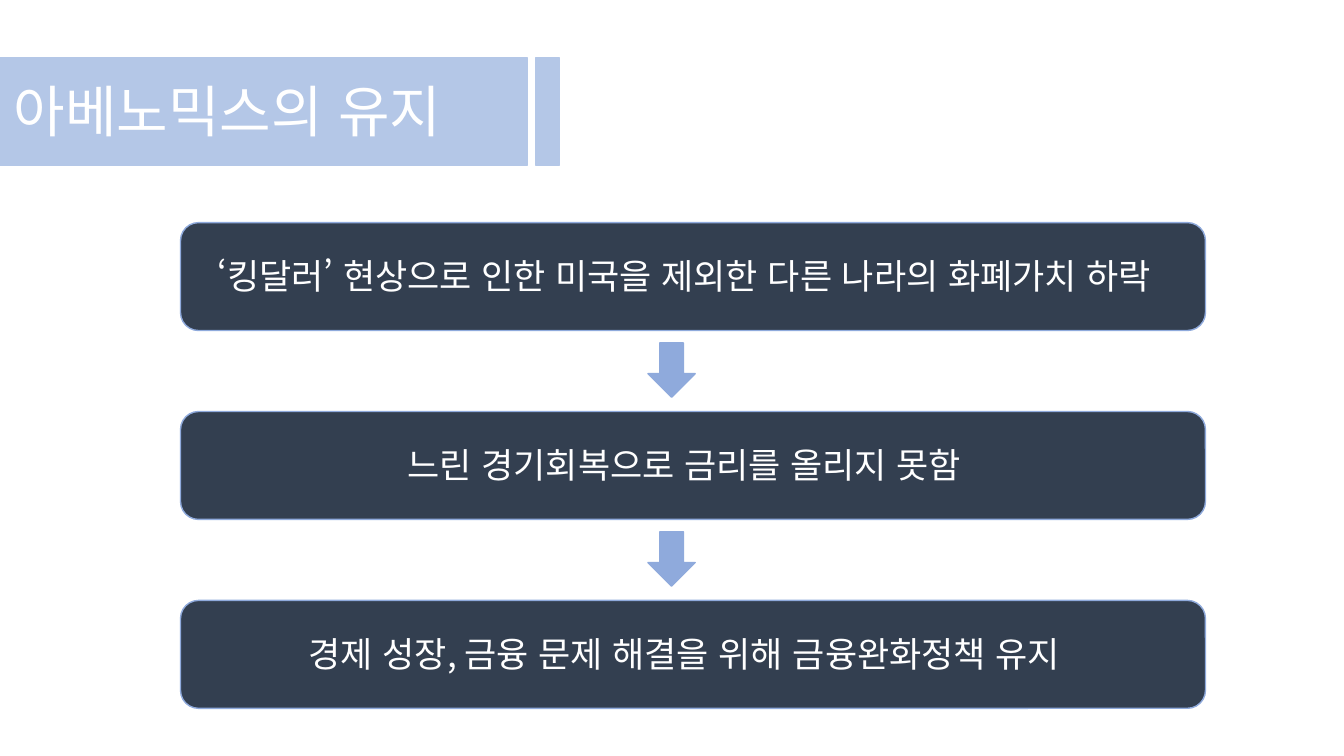
from pptx import Presentation
from pptx import util as u
from pptx.dml.color import RGBColor
from pptx.enum import lang, shapes, text
from pptx.oxml import parse_xml
from pptx.oxml.ns import nsdecls


def color(value):
    return RGBColor.from_string(value)


def apply(target, values):
    for name, value in values.items():
        setattr(target, name, value)


class Deck:
    font = "Noto Sans CJK KR"
    light, accent, dark, white = "B4C7E7", "8FAADC", "333F50", "FFFFFF"

    def __init__(self, width, height):
        self.file = Presentation()
        apply(self.file, {"slide_width": u.Cm(width), "slide_height": u.Cm(height)})
        self.slide = self.file.slides.add_slide(self.file.slide_layouts[6])

    def group(self):
        return self.slide.shapes.add_group_shape().shapes

    def block(self, parent, preset, place, fill, line):
        block = parent.add_shape(preset, *map(u.Cm, place))
        block.shadow.inherit = False
        block.fill.solid()
        block.fill.fore_color.rgb = color(fill)
        block.line.color.rgb = color(line)
        block.line.width = u.Pt(1)

    def label(self, parent, wording, place, size, align):
        frame = parent.add_textbox(*map(u.Cm, place)).text_frame
        apply(frame, {"word_wrap": True, "auto_size": text.MSO_AUTO_SIZE.SHAPE_TO_FIT_TEXT})
        paragraph = frame.paragraphs[0]
        paragraph.alignment = align
        run = paragraph.add_run()
        run.text = wording
        apply(run.font, {"size": u.Pt(size), "name": self.font,
                         "language_id": lang.MSO_LANGUAGE_ID.KOREAN})
        run.font.color.rgb = color(self.white)
        east_asian = parse_xml(f'<a:ea {nsdecls("a")} typeface="{self.font}"/>')
        run.font._element.find("{*}latin").addnext(east_asian)


REASONS = [
    "‘킹달러’ 현상으로 인한 미국을 제외한 다른 나라의 화폐가치 하락",
    "느린 경기회복으로 금리를 올리지 못함",
    "경제 성장, 금융 문제 해결을 위해 금융완화정책 유지",
]
FIRST_TOP, STEP = 5.61, 4.76


def main():
    deck = Deck(33.87, 19.05)
    preset = shapes.MSO_SHAPE

    banner = deck.group()
    for left, width in ((0, 13.28), (13.51, 0.58)):
        deck.block(banner, preset.RECTANGLE, (left, 1.45, width, 2.72), deck.light, deck.light)
    deck.label(deck.slide.shapes, "아베노믹스의 유지", (0.1, 1.8, 13.28, 1.96), 40,
               text.PP_ALIGN.LEFT)

    for index, reason in enumerate(REASONS):
        top = FIRST_TOP + index * STEP
        if index:
            deck.block(deck.slide.shapes, preset.DOWN_ARROW,
                       (16.33, top - 1.73, 1.19, 1.37), deck.accent, deck.accent)
        step = deck.group()
        deck.block(step, preset.ROUNDED_RECTANGLE, (4.55, top, 25.83, 2.72),
                   deck.dark, deck.accent)
        deck.label(step, reason, (3.81, top + 0.69, 26.87, 1.32), 25, text.PP_ALIGN.CENTER)

    deck.file.save("out.pptx")


if __name__ == "__main__":
    main()
